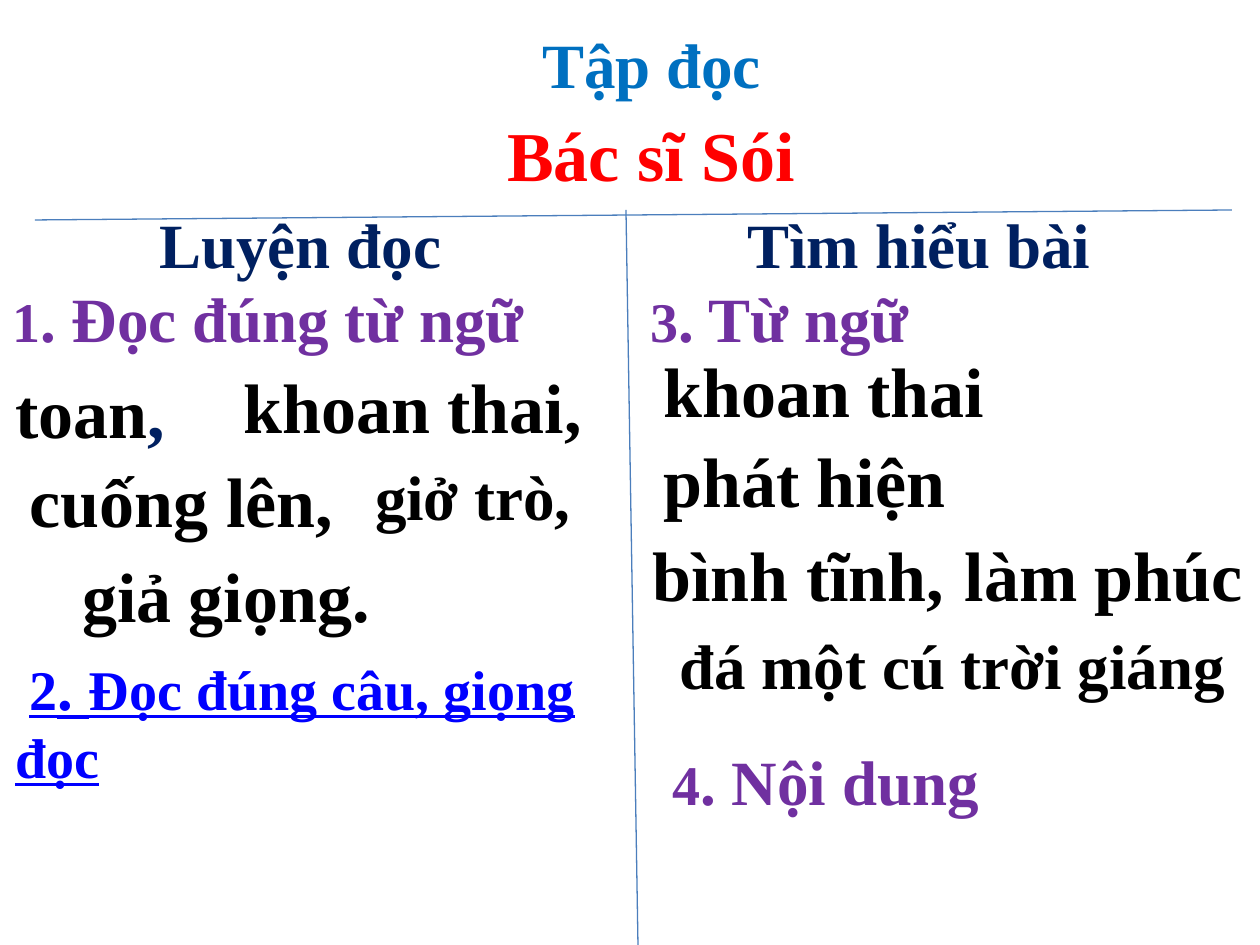
from dataclasses import dataclass

from lxml import etree
from pptx import Presentation
from pptx.dml.color import RGBColor
from pptx.enum.shapes import MSO_CONNECTOR
from pptx.enum.text import MSO_ANCHOR, MSO_AUTO_SIZE, PP_ALIGN
from pptx.oxml.ns import qn
from pptx.util import Pt

EMU_PER_PX = 914400 / 126
STRAIGHT = MSO_CONNECTOR.STRAIGHT
LEFT, CENTER = PP_ALIGN.LEFT, PP_ALIGN.CENTER
MIDDLE = MSO_ANCHOR.MIDDLE
GROW, FIXED = MSO_AUTO_SIZE.SHAPE_TO_FIT_TEXT, MSO_AUTO_SIZE.NONE


@dataclass(frozen=True)
class Theme:
    font: str = "Times New Roman"
    blue: str = "0070C0"
    red: str = "FF0000"
    navy: str = "002060"
    purple: str = "7030A0"
    link: str = "0000FF"
    black: str = "000000"
    rule: str = "4B7EBC"
    small: int = 32
    medium: int = 36
    large: int = 40
    rule_width: float = 0.75


def px(length):
    return round(length * EMU_PER_PX)


class LessonPage:
    def __init__(self, page, theme):
        self.page = page
        self.theme = theme

    def add_spans(self, frame, spans, align):
        """Each span is (text, size, colour) with an optional underline flag."""
        para = frame.paragraphs[0]
        para.alignment = align
        for text, size, color, *underline in spans:
            span = para.add_run()
            span.text = text
            font = span.font
            font.name, font.size, font.bold = self.theme.font, Pt(size), True
            font.color.rgb = RGBColor.from_string(color)
            if underline:
                font.underline = underline[0]
        return para

    def title(self, place, spans):
        box = self.page.shapes.title
        box.left, box.top, box.width, box.height = map(px, place)
        frame = box.text_frame
        frame.auto_size = FIXED
        frame.vertical_anchor = MIDDLE
        self.add_spans(frame, spans, CENTER)

    def text(self, place, spans, align=LEFT):
        box = self.page.shapes.add_textbox(*map(px, place))
        frame = box.text_frame
        frame.word_wrap = True
        frame.auto_size = GROW
        return self.add_spans(frame, spans, align)

    def line(self, *ends):
        rule = self.page.shapes.add_connector(STRAIGHT, *map(px, ends))
        rule.line.color.rgb = RGBColor.from_string(self.theme.rule)
        rule.line.width = Pt(self.theme.rule_width)
        properties = rule._element.find(qn("p:spPr"))
        etree.SubElement(properties, qn("a:effectLst"))


def main():
    theme = Theme()
    small, medium, large = theme.small, theme.medium, theme.large
    deck = Presentation()
    deck.slide_width, deck.slide_height = px(1260), px(945)
    lesson = LessonPage(deck.slides.add_slide(deck.slide_layouts[5]), theme)

    # Lesson title and story name
    lesson.title((116, 21, 1071, 84), [("Tập đọc", medium, theme.blue)])
    story = lesson.text((21, 105, 1260, 105),
                        [("Bác sĩ Sói", large, theme.red)], CENTER)
    story.space_before = Pt(6)

    # Rules between the heading and the two columns
    lesson.line(35, 220, 1232, 210)
    lesson.line(626, 210, 638, 945)

    # Column headings
    for left, width, heading in ((147, 311, "Luyện đọc"),
                                 (735, 410, "Tìm hiểu bài")):
        lesson.text((left, 199, width, 89), [(heading, medium, theme.navy)])

    # Numbered sections
    for left, top, width, number, label in (
            (0, 273, 546, "1", ". Đọc đúng từ ngữ"),
            (638, 273, 302, "3", ". Từ ngữ"),
            (660, 736, 369, "4", ". Nội dung")):
        lesson.text((left, top, width, 89),
                    [(number, small, theme.purple),
                     (label, medium, theme.purple)])
    lesson.text((3, 641, 649, 158),
                [(" ", small, theme.purple),
                 ("2", small, theme.link, True),
                 (". ", medium, theme.link, True),
                 ("Đọc đúng câu, giọng đọc", small, theme.link, True)])

    # Words to practise and to explain
    lesson.text((3, 362, 186, 97), [("toan", large, theme.black),
                                    (",", large, theme.navy)])
    for left, top, width, words, size, align in (
            (231, 357, 431, "khoan thai,", large, LEFT),
            (0, 451, 459, " cuống lên,", large, LEFT),
            (347, 451, 252, "giở trò,", medium, CENTER),
            (32, 546, 388, "giả giọng.", large, CENTER),
            (651, 341, 368, "khoan thai", large, LEFT),
            (651, 431, 399, "phát hiện", large, LEFT),
            (640, 525, 420, "bình tĩnh,", large, LEFT),
            (935, 525, 325, " làm phúc", large, LEFT),
            (651, 620, 609, " đá một cú trời giáng", medium, LEFT)):
        height = 97 if size == large else 89
        lesson.text((left, top, width, height),
                    [(words, size, theme.black)], align)

    deck.save("out.pptx")


if __name__ == "__main__":
    main()
